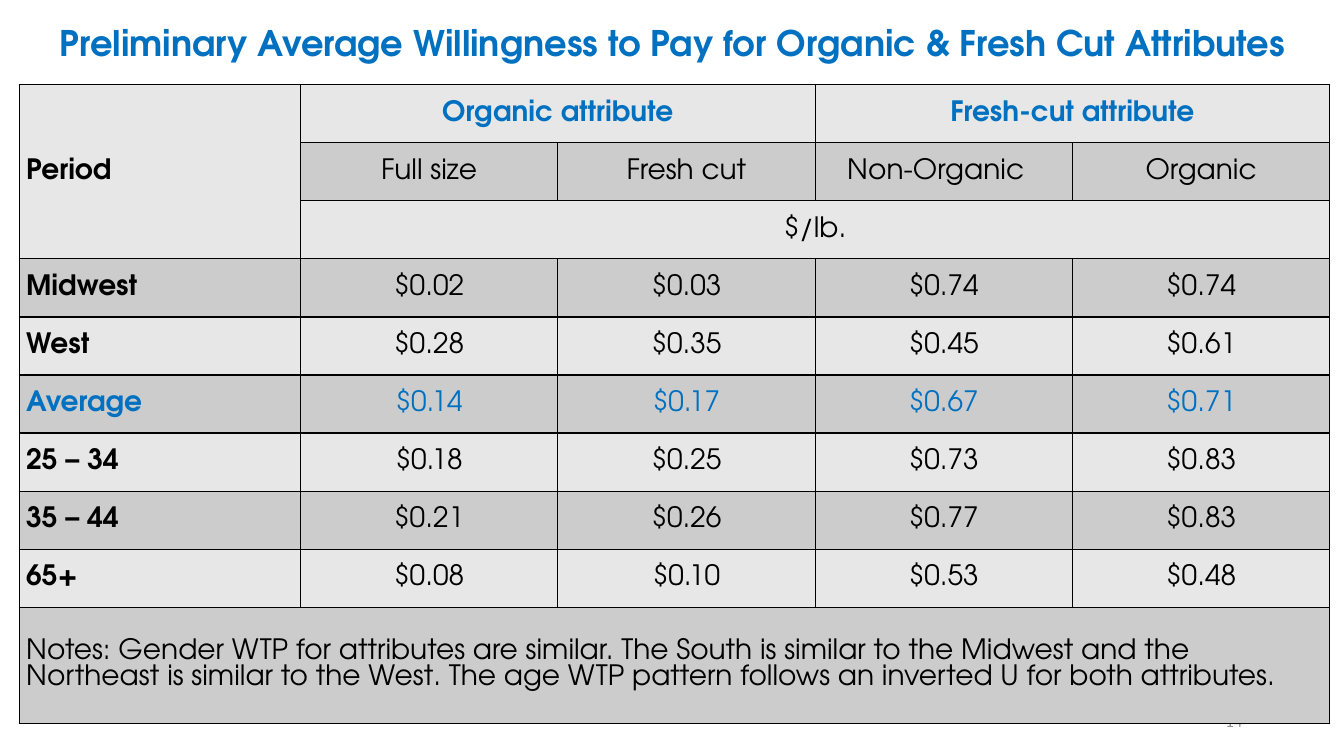
from lxml import etree
from pptx import Presentation
from pptx.dml.color import RGBColor
from pptx.enum.text import MSO_ANCHOR as Anchor, MSO_AUTO_SIZE as AutoSize, PP_ALIGN as Align
from pptx.oxml.ns import qn
from pptx.util import Inches, Pt

TITLE = "Preliminary Average Willingness to Pay for Organic & Fresh Cut Attributes"
PAGE = "14"
NOTES = ("Notes: Gender WTP for attributes are similar. The South is similar to the Midwest "
         "and the Northeast is similar to the West. The age WTP pattern follows an inverted U "
         "for both attributes.")
ROWS = [
    ("Period", "Organic attribute", "", "Fresh-cut attribute", ""),
    ("", "Full size", "Fresh cut", "Non-Organic", "Organic"),
    ("", "$/lb.", "", "", ""),
    ("Midwest", "$0.02", "$0.03", "$0.74", "$0.74"),
    ("West", "$0.28", "$0.35", "$0.45", "$0.61"),
    ("Average", "$0.14", "$0.17", "$0.67", "$0.71"),
    ("25 – 34", "$0.18", "$0.25", "$0.73", "$0.83"),
    ("35 – 44", "$0.21", "$0.26", "$0.77", "$0.83"),
    ("65+", "$0.08", "$0.10", "$0.53", "$0.48"),
    (NOTES, "", "", "", ""),
]
MERGES = [((0, 0), (2, 0)), ((0, 1), (0, 2)), ((0, 3), (0, 4)), ((2, 1), (2, 4)), ((9, 0), (9, 4))]
COLORS = {"accent": "0070C0", "text": "000000", "border": "000000", "page": "8C8C8C",
          "light": "E7E7E7", "dark": "CCCCCC"}
FONT = "TeX Gyre Adventor"
TABLE_W, TABLE_H, PERIOD_W = 13, 6.34, 2.79
LAST = len(ROWS) - 1


def rgb(name):
    return RGBColor.from_string(COLORS[name])


def style(p, size, color, bold=False, align=Align.LEFT, font=FONT):
    p.alignment = align
    p.font.name = font
    p.font.size = Pt(size)
    p.font.bold = bold
    p.font.color.rgb = rgb(color)


def add_borders(cell):
    tc_pr = cell._tc.get_or_add_tcPr()
    for i, side in enumerate(("a:lnL", "a:lnR", "a:lnT", "a:lnB")):
        ln = etree.Element(qn(side), w=str(Pt(1)))
        fill = etree.SubElement(ln, qn("a:solidFill"))
        etree.SubElement(fill, qn("a:srgbClr"), val=COLORS["border"])
        tc_pr.insert(i, ln)


def add_title(slide):
    sp = slide.shapes.title
    sp.left, sp.top, sp.width, sp.height = map(Inches, (0.28, 0.19, 12.78, 0.51))
    tf = sp.text_frame
    tf.text = TITLE
    tf.auto_size = AutoSize.NONE
    tf.vertical_anchor = Anchor.MIDDLE
    p = tf.paragraphs[0]
    p.line_spacing = 0.9
    style(p, 25.2, "accent", True, Align.CENTER)


def add_page_number(slide):
    sp = slide.shapes.add_textbox(*map(Inches, (9.42, 6.95, 3, 0.4)))
    tf = sp.text_frame
    tf.word_wrap = True
    tf.vertical_anchor = Anchor.MIDDLE
    tf.text = PAGE
    style(tf.paragraphs[0], 12, "page", align=Align.RIGHT, font="Calibri")


def add_wtp_table(slide):
    n_cols = len(ROWS[0])
    table = slide.shapes.add_table(len(ROWS), n_cols, Inches(0.19), Inches(0.84),
                                   Inches(TABLE_W), Inches(TABLE_H)).table
    for c, col in enumerate(table.columns):
        col.width = Inches((TABLE_W - PERIOD_W) / (n_cols - 1) if c else PERIOD_W)
    unit = TABLE_H / (len(ROWS) + 1)
    for r, row in enumerate(table.rows):
        row.height = Inches(unit * 2 if r == LAST else unit)
    for start, end in MERGES:
        table.cell(*start).merge(table.cell(*end))
    for r, values in enumerate(ROWS):
        for c, value in enumerate(values):
            cell = table.cell(r, c)
            cell.fill.solid()
            cell.fill.fore_color.rgb = rgb("dark" if r % 2 else "light")
            cell.vertical_anchor = Anchor.MIDDLE
            cell.margin_left = Inches(0.07)
            cell.margin_right = Inches(0.23 if value == "Non-Organic" else 0.07)
            cell.margin_top = cell.margin_bottom = 0
            add_borders(cell)
            cell.text = value
            accent = values[0] == "Average" or (r == 0 and c > 0)
            bold = r == 0 or (c == 0 and r < LAST)
            style(cell.text_frame.paragraphs[0], 20, "accent" if accent else "text", bold,
                  Align.CENTER if c else Align.LEFT)


def main():
    prs = Presentation()
    prs.slide_width, prs.slide_height = Inches(13.33), Inches(7.5)
    slide = prs.slides.add_slide(prs.slide_layouts[5])
    add_title(slide)
    add_page_number(slide)
    add_wtp_table(slide)
    prs.save("out.pptx")


if __name__ == "__main__":
    main()
